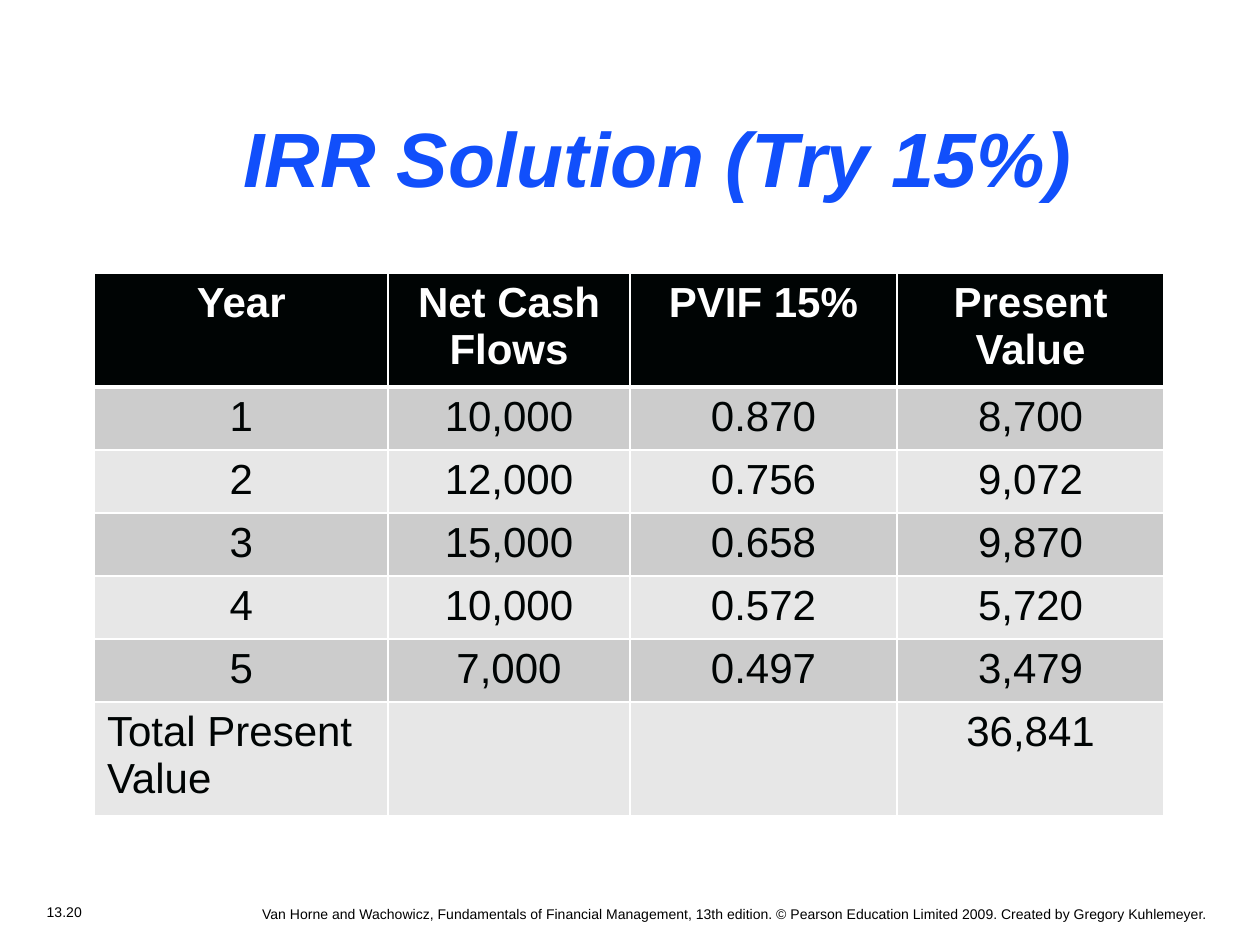
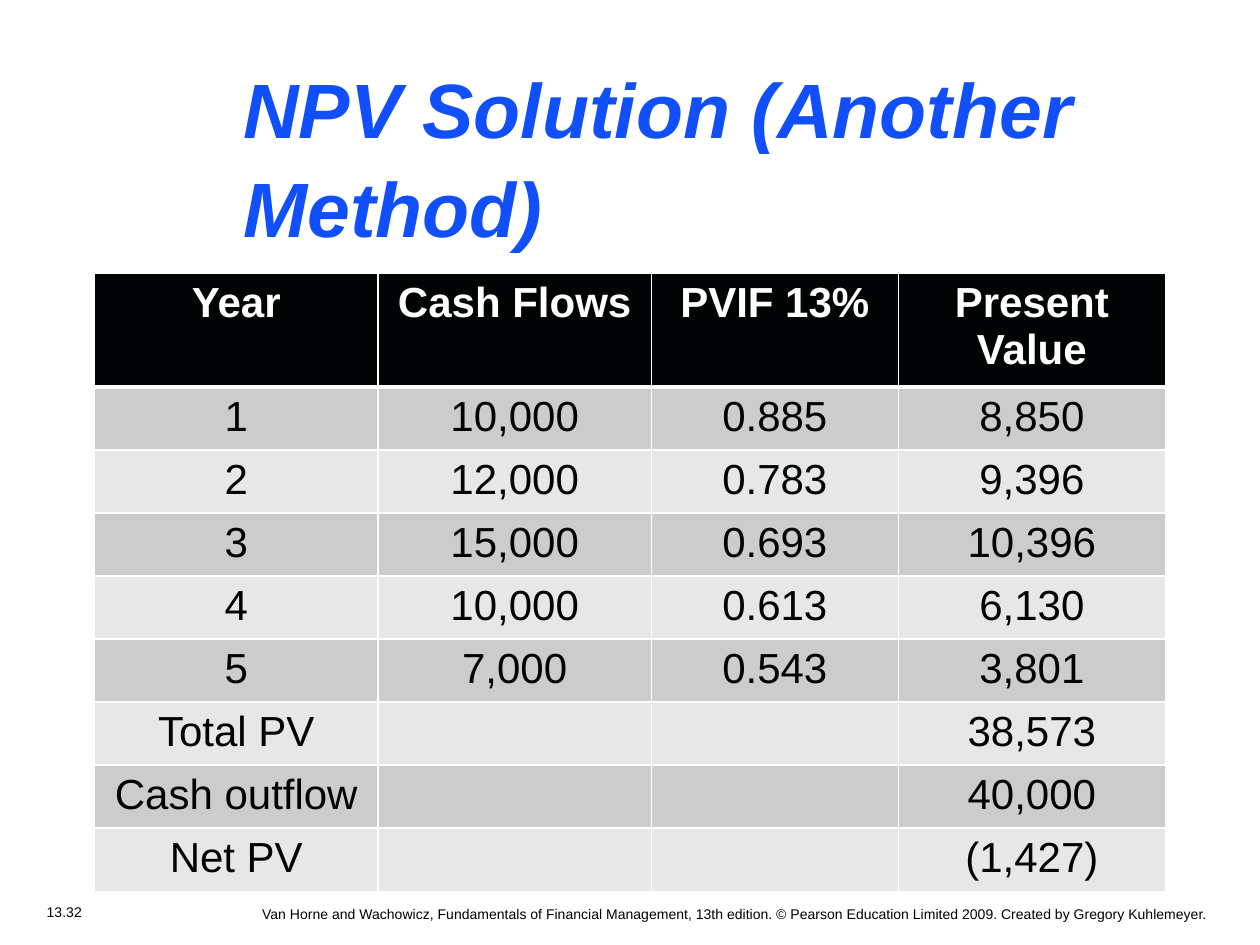
from pptx import Presentation
from pptx.dml.color import RGBColor
from pptx.enum.text import MSO_ANCHOR, MSO_AUTO_SIZE, PP_ALIGN
from pptx.oxml import parse_xml
from pptx.oxml.ns import nsdecls
from pptx.util import Inches, Pt

FONT = "Arial"
BLUE = "114FFB"
INK = "000404"
WHITE = "FFFFFF"
BLACK = "000000"
BANDS = ("CCCCCC", "E7E7E7")
ROW_HEIGHT = 0.47
TALL_ROW_HEIGHT = 0.84
CREDIT = (
    "Van Horne and Wachowicz, Fundamentals of Financial Management, 13th edition. "
    "© Pearson Education Limited 2009. Created by Gregory Kuhlemeyer."
)


def color(value):
    return RGBColor.from_string(value)


def write_text(frame, text, size, fill, align=PP_ALIGN.LEFT, bold=False, italic=False):
    para = frame.paragraphs[0]
    para.alignment = align
    span = para.add_run()
    span.text = text
    span.font.name = FONT
    span.font.size = Pt(size)
    span.font.bold = bold
    span.font.italic = italic
    span.font.color.rgb = color(fill)
    return para


def place(shape, left, top, width, height):
    shape.left, shape.top = Inches(left), Inches(top)
    shape.width, shape.height = Inches(width), Inches(height)


def set_title(page, text, top, height):
    title = page.shapes.title
    place(title, 1.83, top, 7.42, height)
    frame = title.text_frame
    frame.word_wrap = True
    frame.auto_size = MSO_AUTO_SIZE.SHAPE_TO_FIT_TEXT
    frame.vertical_anchor = MSO_ANCHOR.MIDDLE
    para = write_text(frame, text, 44, BLUE, bold=True, italic=True)
    para.line_spacing = 1.07


def add_small_text(page, text, bounds, align, wrap):
    box = page.shapes.add_textbox(*(Inches(length) for length in bounds))
    box.text_frame.word_wrap = wrap
    write_text(box.text_frame, text, 8, BLACK, align=align)


def add_footer(page, number):
    add_small_text(page, number, (0.07, 7.12, 0.88, 0.24), PP_ALIGN.CENTER, False)
    add_small_text(page, CREDIT, (0.24, 7.14, 9.45, 0.21), PP_ALIGN.RIGHT, True)


def set_borders(cell, top, bottom):
    properties = cell._tc.get_or_add_tcPr()
    widths = {"lnL": 1, "lnR": 1, "lnT": top, "lnB": bottom}
    for position, (side, width) in enumerate(widths.items()):
        line = parse_xml(
            f'<a:{side} {nsdecls("a")} w="{Pt(width)}"><a:solidFill>'
            f'<a:srgbClr val="{WHITE}"/></a:solidFill></a:{side}>'
        )
        properties.insert(position, line)


def add_cash_table(page, rows, widths, tall_rows=(0,), left_cells=()):
    heights = [
        TALL_ROW_HEIGHT if index in tall_rows else ROW_HEIGHT
        for index in range(len(rows))
    ]
    table = page.shapes.add_table(
        len(rows), len(widths), Inches(0.75), Inches(2.17),
        Inches(sum(widths)), Inches(sum(heights)),
    ).table
    for column, width in zip(table.columns, widths):
        column.width = Inches(width)
    for row_index, values in enumerate(rows):
        table.rows[row_index].height = Inches(heights[row_index])
        header = row_index == 0
        for column_index, value in enumerate(values):
            cell = table.cell(row_index, column_index)
            cell.fill.solid()
            cell.fill.fore_color.rgb = color(INK if header else BANDS[(row_index - 1) % 2])
            set_borders(cell, 3 if row_index == 1 else 1, 3 if header else 1)
            if value:
                at_left = (row_index, column_index) in left_cells
                write_text(
                    cell.text_frame, value, 24, WHITE if header else INK,
                    align=PP_ALIGN.LEFT if at_left else PP_ALIGN.CENTER, bold=header,
                )


def add_page(deck, title, title_top, title_height, number):
    page = deck.slides.add_slide(deck.slide_layouts[5])
    set_title(page, title, title_top, title_height)
    add_footer(page, number)
    return page


def main():
    deck = Presentation()
    deck.slide_width, deck.slide_height = Inches(10), Inches(7.5)

    irr_page = add_page(deck, "IRR Solution (Try 15%)", 0.8, 0.84, "13.20")
    irr_rows = [
        ("Year", "Net Cash Flows", "PVIF 15%", "Present Value"),
        ("1", "10,000", "0.870", "8,700"),
        ("2", "12,000", "0.756", "9,072"),
        ("3", "15,000", "0.658", "9,870"),
        ("4", "10,000", "0.572", "5,720"),
        ("5", "7,000", "0.497", "3,479"),
        ("Total Present Value", "", "", "36,841"),
    ]
    add_cash_table(
        irr_page, irr_rows, (2.33, 1.92, 2.12, 2.12),
        tall_rows=(0, 6), left_cells=((6, 0),),
    )

    npv_page = add_page(deck, "NPV Solution (Another Method)", 0.43, 1.58, "13.32")
    npv_rows = [
        ("Year", "Cash Flows", "PVIF 13%", "Present Value"),
        ("1", "10,000", "0.885", "8,850"),
        ("2", "12,000", "0.783", "9,396"),
        ("3", "15,000", "0.693", "10,396"),
        ("4", "10,000", "0.613", "6,130"),
        ("5", "7,000", "0.543", "3,801"),
        ("Total PV", "", "", "38,573"),
        ("Cash outflow", "", "", "40,000"),
        ("Net PV", "", "", "(1,427)"),
    ]
    add_cash_table(npv_page, npv_rows, (2.25, 2.17, 1.96, 2.12))

    deck.save("out.pptx")


if __name__ == "__main__":
    main()
